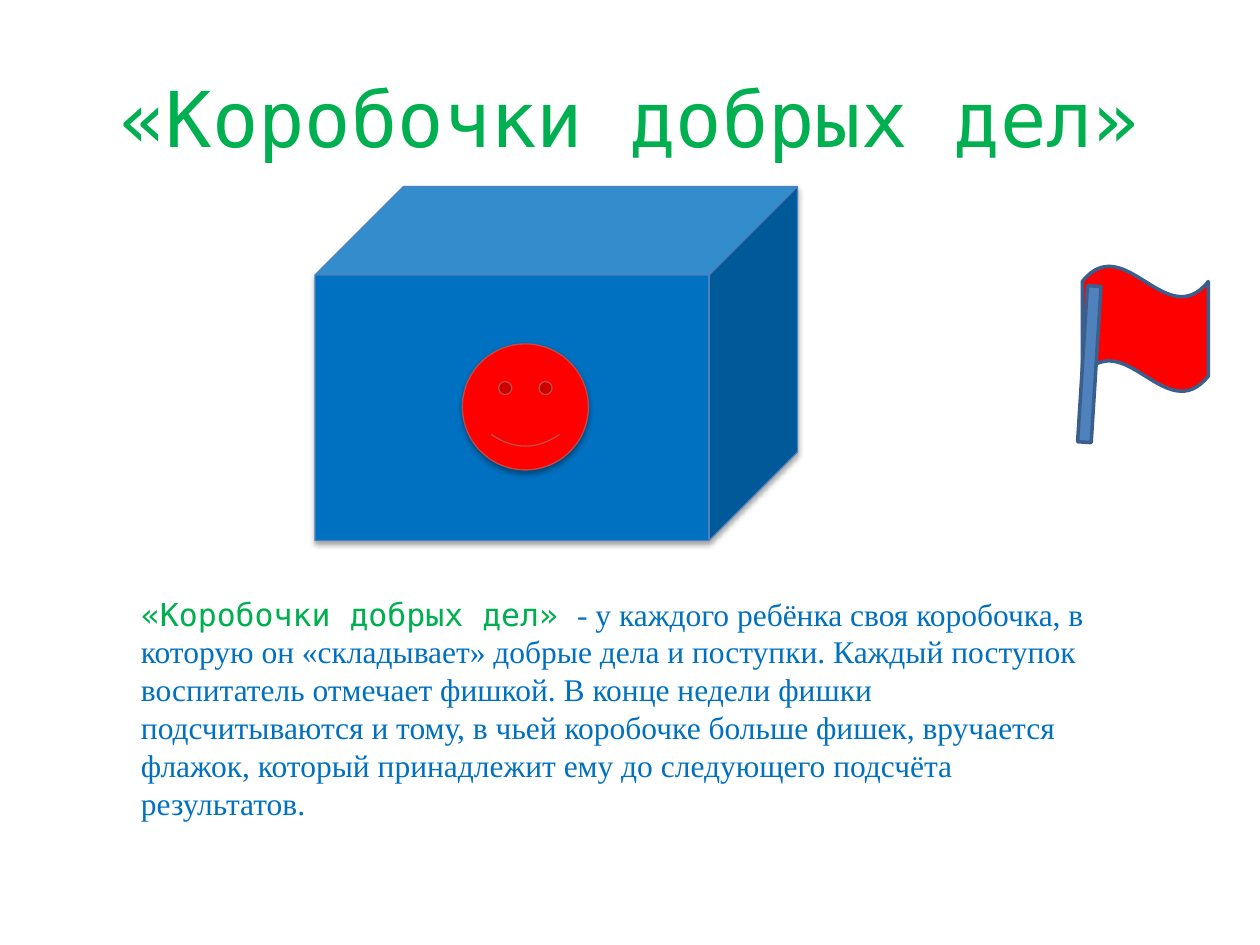
"""Build the slide about the boxes of good deeds."""
from lxml import etree
from pptx import Presentation
from pptx.dml.color import RGBColor
from pptx.enum.shapes import MSO_SHAPE as Shape
from pptx.enum.text import MSO_ANCHOR, PP_ALIGN
from pptx.oxml import parse_xml
from pptx.oxml.ns import nsdecls, qn
from pptx.util import Inches, Pt

SHADOW = (
    f'<a:outerShdw {nsdecls("a")} blurRad="40000" dist="23000" dir="5400000" rotWithShape="0">'
    '<a:srgbClr val="000000"><a:alpha val="35000"/></a:srgbClr></a:outerShdw>'
)
MONO, SERIF = "DejaVu Sans Mono", "Times New Roman"
GREEN, BLUE, RED = "00B050", "0070C0", "FF0000"


def color(value):
    return RGBColor.from_string(value)


def style(run, face, size, value):
    run.font.name = face
    run.font.size = Pt(size)
    run.font.color.rgb = color(value)


prs = Presentation()
prs.slide_width, prs.slide_height = Inches(10), Inches(7.5)
slide = prs.slides.add_slide(prs.slide_layouts[5])

title = slide.shapes.title
title.left, title.top = Inches(0.5), Inches(0.3)
title.width, title.height = Inches(9), Inches(1.25)
title.text_frame.text = "«Коробочки добрых дел»"
title.text_frame.vertical_anchor = MSO_ANCHOR.MIDDLE
heading = title.text_frame.paragraphs[0]
heading.alignment = PP_ALIGN.CENTER
style(heading.runs[0], MONO, 44, GREEN)

description = slide.shapes.add_textbox(Inches(1.02), Inches(4.67), Inches(7.81), Inches(1.92))
description.text_frame.word_wrap = True
paragraph = description.text_frame.paragraphs[0]
for words, face, value in [
    ("«Коробочки добрых дел» ", MONO, GREEN),
    ("- у каждого ребёнка своя коробочка, в которую он «складывает» добрые дела и поступки. "
     "Каждый поступок воспитатель отмечает фишкой. В конце недели фишки подсчитываются и тому, "
     "в чьей коробочке больше фишек, вручается флажок, который принадлежит ему до следующего "
     "подсчёта результатов.", SERIF, BLUE),
]:
    run = paragraph.add_run()
    run.text = words
    style(run, face, 18, value)

for preset, box, rotation, fill, line, weight, shadowed in [
    (Shape.CUBE, (2.5, 1.48, 3.83, 2.81), 0, BLUE, "4F81BD", 0.75, True),
    (Shape.SMILEY_FACE, (3.67, 2.73, 1, 1), 0, RED, "BF4C48", 0.75, True),
    (Shape.WAVE, (8.59, 2.11, 1, 1), 0, RED, "3A5F8C", 2, False),
    (Shape.MATH_MINUS, (7.8, 2.66, 1.69, 0.46), 93.6, "4F81BD", "3A5F8C", 2, False),
]:
    figure = slide.shapes.add_shape(preset, *map(Inches, box))
    figure.rotation = rotation
    figure.fill.solid()
    figure.fill.fore_color.rgb = color(fill)
    figure.line.color.rgb = color(line)
    figure.line.width = Pt(weight)
    figure.shadow.inherit = False
    if shadowed:
        figure.element.spPr.find(qn("a:effectLst")).append(parse_xml(SHADOW))

prs.save("out.pptx")
